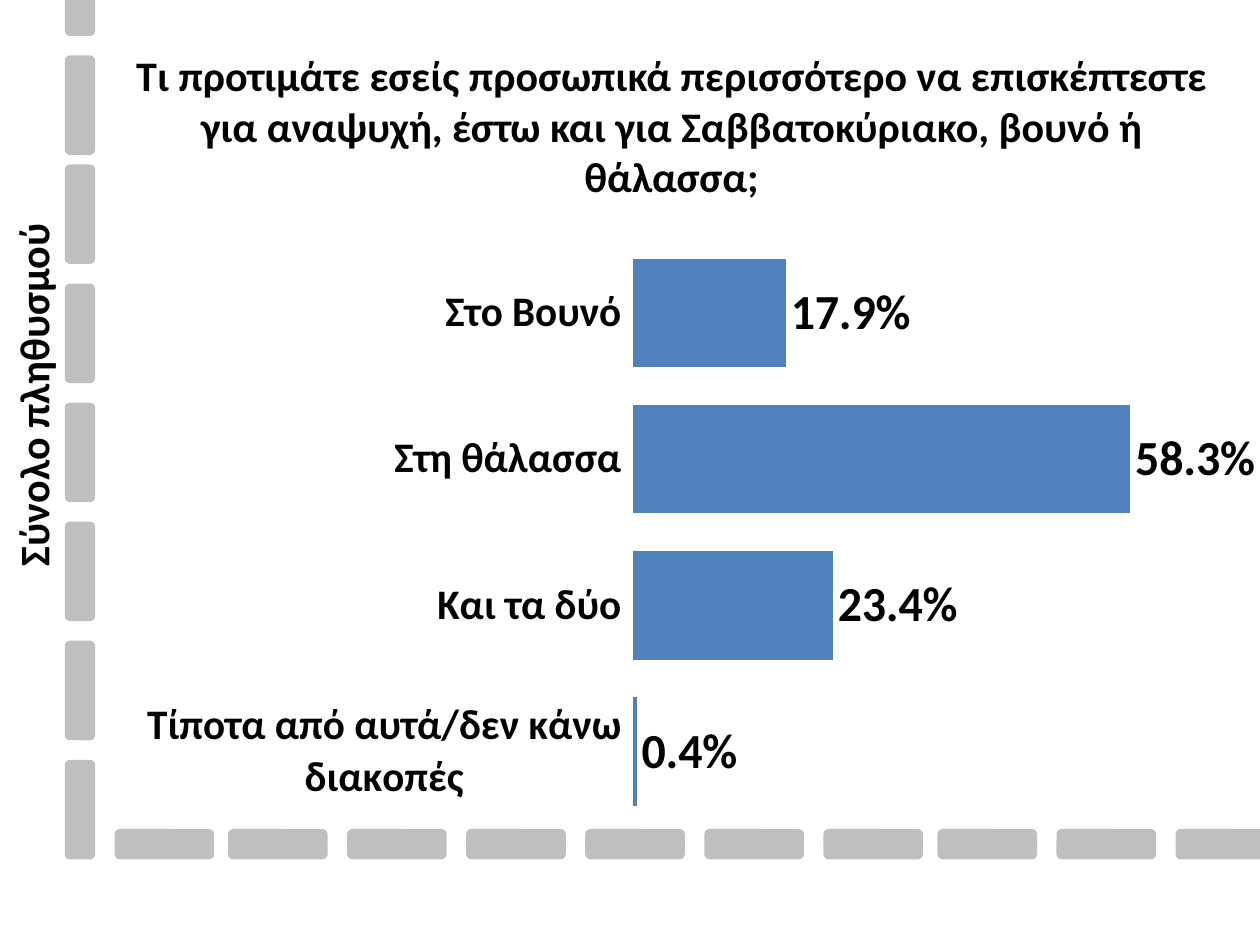
from lxml import etree
from pptx import Presentation
from pptx.chart.data import CategoryChartData
from pptx.dml.color import RGBColor
from pptx.enum.chart import XL_CHART_TYPE, XL_LABEL_POSITION, XL_TICK_MARK
from pptx.enum.shapes import MSO_SHAPE
from pptx.enum.text import MSO_ANCHOR, MSO_AUTO_SIZE, PP_ALIGN
from pptx.oxml.ns import qn
from pptx.util import Inches, Pt

BAR_CLUSTERED = XL_CHART_TYPE.BAR_CLUSTERED
OUTSIDE_END = XL_LABEL_POSITION.OUTSIDE_END
CROSS = XL_TICK_MARK.CROSS
ROUNDED = MSO_SHAPE.ROUNDED_RECTANGLE
MIDDLE = MSO_ANCHOR.MIDDLE
FIT_TEXT = MSO_AUTO_SIZE.SHAPE_TO_FIT_TEXT
CENTER, LEFT = PP_ALIGN.CENTER, PP_ALIGN.LEFT

# Content
QUESTION = ("Τι προτιμάτε εσείς προσωπικά περισσότερο να επισκέπτεστε "
            "για αναψυχή, έστω και για Σαββατοκύριακο, βουνό ή θάλασσα;")
POPULATION = "Σύνολο πληθυσμού"
ANSWERS = [
    ("Στο Βουνό", 0.179),
    ("Στη θάλασσα", 0.583),
    ("Και τα δύο", 0.234),
    ("Τίποτα από αυτά/δεν κάνω διακοπές", 0.004),
]
PLOT_AREA = {"x": 0.462, "y": 0.031, "w": 0.538, "h": 0.938}

# Dashed frame: runs of evenly spaced dashes as (start, count)
DASH_LENGTH, DASH_WIDTH, DASH_PITCH = 0.79, 0.24, 1.89 / 2
SIDE_RUNS = [(-0.23, 2), (1.58, 6)]
BOTTOM_RUNS = [(1.81, 6), (7.44, 3)]
SIDE_LEFT, BOTTOM_TOP, CORNER_LEFT = 0.24, 6.58, 0.91

FONT = "Calibri"
BLACK, GREY, BLUE = "000000", "BFBFBF", "4F81BD"


def color(hex_value):
    return RGBColor.from_string(hex_value)


def style_font(font, size, bold=True):
    font.name = FONT
    font.size = Pt(size)
    font.bold = bold
    font.color.rgb = color(BLACK)


def positions(runs):
    return [start + i * DASH_PITCH for start, count in runs for i in range(count)]


def add_dash(shapes, left, top, rotation=0):
    dash = shapes.add_shape(ROUNDED, Inches(left), Inches(top),
                            Inches(DASH_LENGTH), Inches(DASH_WIDTH))
    dash.rotation = rotation
    dash.shadow.inherit = False
    dash.fill.solid()
    dash.fill.fore_color.rgb = color(GREY)
    dash.line.fill.background()


def add_label(slide, text, box, align, wrap):
    label = slide.shapes.add_textbox(*map(Inches, box))
    frame = label.text_frame
    frame.word_wrap = wrap
    paragraph = frame.paragraphs[0]
    paragraph.text = text
    paragraph.alignment = align
    style_font(paragraph.font, 24)
    return label


def set_plot_layout(chart, fractions):
    plot_area = chart.plots[0]._element.getparent()
    for old_layout in plot_area.findall(qn("c:layout")):
        plot_area.remove(old_layout)
    layout = etree.Element(qn("c:layout"))
    manual = etree.SubElement(layout, qn("c:manualLayout"))
    settings = [("layoutTarget", "inner"), ("xMode", "edge"), ("yMode", "edge")]
    for tag, value in settings + list(fractions.items()):
        etree.SubElement(manual, qn(f"c:{tag}")).set("val", str(value))
    plot_area.insert(0, layout)


def add_answers_chart(slide):
    data = CategoryChartData(number_format="0.0%")
    data.categories = [answer for answer, _ in ANSWERS]
    data.add_series("Series 1", [share for _, share in ANSWERS])
    chart = slide.shapes.add_chart(BAR_CLUSTERED, Inches(0.96), Inches(1.75),
                                   Inches(9), Inches(4.95), data).chart
    chart.has_legend = False
    chart.has_title = False
    style_font(chart.font, 18, bold=False)

    answer_axis = chart.category_axis
    answer_axis.reverse_order = True
    answer_axis.major_tick_mark = CROSS
    answer_axis.format.line.fill.background()
    style_font(answer_axis.tick_labels.font, 24)

    share_axis = chart.value_axis
    share_axis.minimum_scale, share_axis.maximum_scale = 0, 0.7
    share_axis.has_major_gridlines = False
    share_axis.visible = False

    plot = chart.plots[0]
    plot.vary_by_categories = False
    plot.gap_width, plot.overlap = 35, 9
    shares = plot.series[0]
    shares.format.fill.solid()
    shares.format.fill.fore_color.rgb = color(BLUE)

    labels = shares.data_labels
    labels.show_value = True
    labels.position = OUTSIDE_END
    labels.number_format = "0.0%"
    labels.number_format_is_linked = False
    style_font(labels.font, 28)
    set_plot_layout(chart, PLOT_AREA)


def main():
    prs = Presentation()
    prs.slide_width, prs.slide_height = Inches(10), Inches(7.5)
    slide = prs.slides.add_slide(prs.slide_layouts[6])

    # Dashed frame
    for top in positions(SIDE_RUNS):
        add_dash(slide.shapes, SIDE_LEFT, top, rotation=270)
    add_dash(slide.shapes, CORNER_LEFT, BOTTOM_TOP)
    bottom_row = slide.shapes.add_group_shape()
    for left in reversed(positions(BOTTOM_RUNS)):
        add_dash(bottom_row.shapes, left, BOTTOM_TOP)

    # Question, chart and side label
    question = add_label(slide, QUESTION, (0.83, 0.37, 9, 1.25), CENTER, True)
    question.text_frame.vertical_anchor = MIDDLE
    add_answers_chart(slide)
    population = add_label(slide, POPULATION, (-1.21, 2.87, 2.94, 0.5), LEFT, False)
    population.text_frame.auto_size = FIT_TEXT
    population.rotation = 270

    prs.save("out.pptx")


if __name__ == "__main__":
    main()
